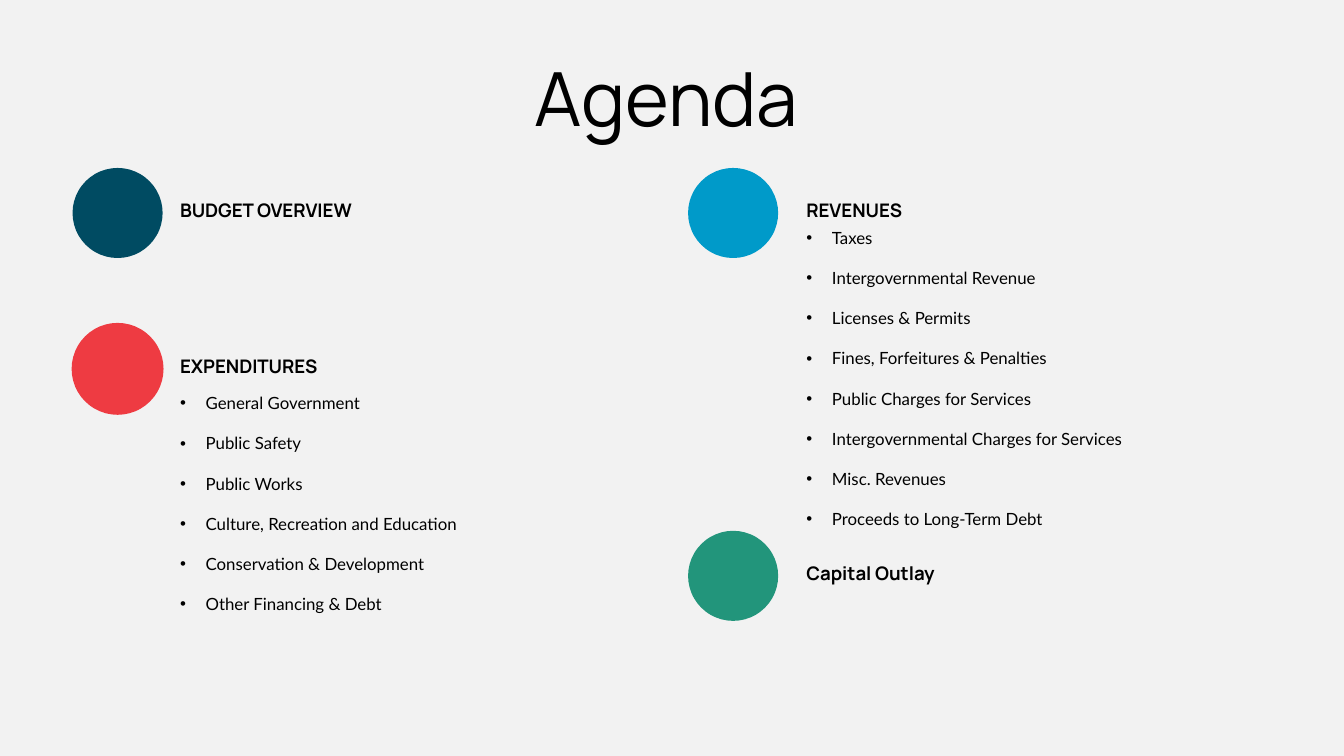
from pptx import Presentation
from pptx.dml.color import RGBColor
from pptx.enum.shapes import MSO_SHAPE
from pptx.enum.text import MSO_ANCHOR, MSO_AUTO_SIZE, PP_ALIGN
from pptx.oxml.ns import qn
from pptx.util import Inches, Pt
from lxml import etree


def rgb(code):
    return RGBColor.from_string(code)


def write(shape, lines, font="Manrope", size=10, bold=False, align=PP_ALIGN.LEFT,
          leading=0.9, before=7.5, inset=(0, 0, 0, 0), bullet=None):
    """Fill a shape with one paragraph per line; inset is left, top, right, bottom."""
    frame = shape.text_frame
    frame.word_wrap = True
    frame.auto_size = MSO_AUTO_SIZE.NONE
    frame.vertical_anchor = MSO_ANCHOR.TOP
    (frame.margin_left, frame.margin_top,
     frame.margin_right, frame.margin_bottom) = map(Inches, inset)
    frame.text = "\n".join(lines)
    for para in frame.paragraphs:
        para.alignment = align
        para.line_spacing = leading
        para.space_before = Pt(before)
        run = para.runs[0].font
        run.name, run.size, run.bold = font, Pt(size), bold
        run.color.rgb = rgb("000000")
        if bullet:
            props = para._p.get_or_add_pPr()
            props.set("marL", str(Inches(0.19)))
            props.set("indent", str(-Inches(0.19)))
            etree.SubElement(props, qn("a:buFont"), typeface="Arial")
            etree.SubElement(props, qn("a:buChar"), char=bullet)


deck = Presentation()
deck.slide_width = Inches(10)
deck.slide_height = Inches(10 * 9 / 16)
slide = deck.slides.add_slide(deck.slide_layouts[3])  # title and two lists
slide.background.fill.solid()
slide.background.fill.fore_color.rgb = rgb("F2F2F2")
title, *bodies = slide.placeholders

title.left, title.top = Inches(2.73), Inches(0.41)
title.width, title.height = Inches(4.55), Inches(0.63)
write(title, ["Agenda"], size=40, align=PP_ALIGN.CENTER, before=10,
      inset=(0, 0.05, 0.1, 0.05))

# Heading, dot left, dot top, text left, dot colour
topics = [
    ("BUDGET OVERVIEW", 0.54, 1.25, 1.34, "004B62"),
    ("EXPENDITURES", 0.54, 2.41, 1.34, "EE3B42"),
    ("REVENUES", 5.12, 1.25, 6, "009AC9"),
    ("Capital Outlay", 5.12, 3.95, 6, "22957B"),
]
for name, x, y, left, color in topics:
    dot = slide.shapes.add_shape(MSO_SHAPE.ROUNDED_RECTANGLE, Inches(x), Inches(y),
                                 Inches(0.67), Inches(0.67))
    dot.adjustments[0] = 0.5
    dot.shadow.inherit = False
    dot.fill.solid()
    dot.fill.fore_color.rgb = rgb(color)
    if name == "EXPENDITURES":
        dot.line.color.rgb = rgb(color)
        dot.line.width = Pt(1)
    else:
        dot.line.fill.background()
    head = slide.shapes.add_textbox(Inches(left), Inches(y + 0.17),
                                    Inches(3.23), Inches(0.33))
    write(head, [name], bold=True, inset=(0, 0.08, 0, 0.08))

lists = [
    (1.34, 2.88, ["General Government", "Public Safety", "Public Works",
                  "Culture, Recreation and Education",
                  "Conservation & Development", "Other Financing & Debt"]),
    (6, 1.65, ["Taxes", "Intergovernmental Revenue", "Licenses & Permits",
               "Fines, Forfeitures & Penalties", "Public Charges for Services",
               "Intergovernmental Charges for Services", "Misc. Revenues",
               "Proceeds to Long-Term Debt"]),
]
for body, (left, top, items) in zip(bodies, lists):
    body.left, body.top = Inches(left), Inches(top)
    body.width, body.height = Inches(3.23), Inches(0.39)
    write(body, items, font="Lato", size=9, leading=Pt(14), bullet="•")

deck.save("out.pptx")
